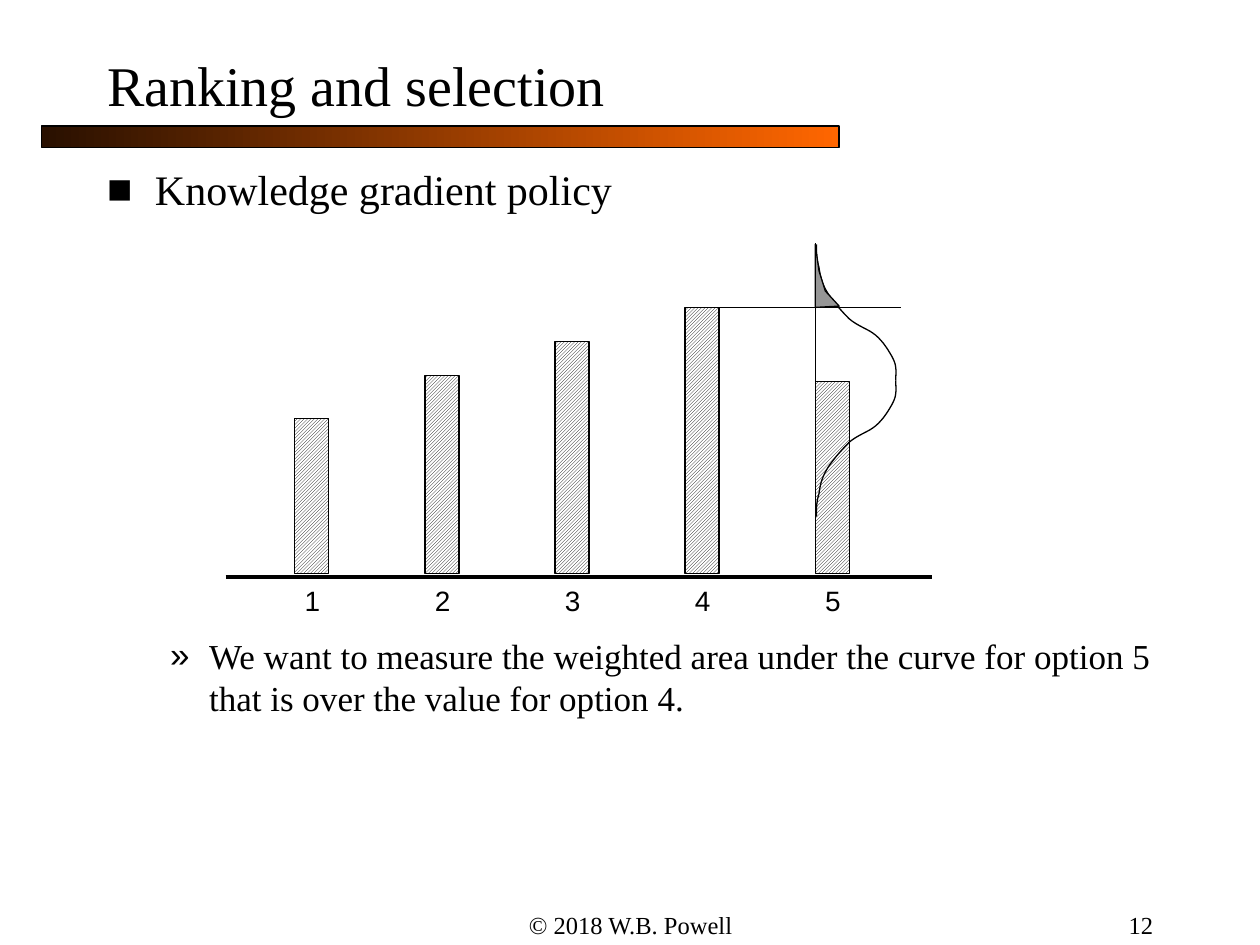
from pptx import Presentation
from pptx.dml.color import RGBColor
from pptx.enum.dml import MSO_PATTERN
from pptx.enum.shapes import MSO_CONNECTOR, MSO_SHAPE
from pptx.enum.text import MSO_ANCHOR, PP_ALIGN
from pptx.oxml.ns import qn
from pptx.util import Inches, Pt
from lxml.etree import SubElement

BLACK = RGBColor(0x00, 0x00, 0x00)
WHITE = RGBColor(0xFF, 0xFF, 0xFF)
GRAY = RGBColor(0x96, 0x96, 0x96)
BROWN = RGBColor(0x29, 0x10, 0x00)
ORANGE = RGBColor(0xFF, 0x66, 0x00)
SERIF, SANS = "Times New Roman", "Arial"

BAR_HEIGHTS = [1.23, 1.57, 1.84, 2.11, 1.52]
HALF_BELL = [
    (0.64, 0), (0.64, 0.06), (0.65, 0.11), (0.62, 0.17),
    (0.59, 0.23), (0.54, 0.31), (0.48, 0.36),
    (0.42, 0.41), (0.34, 0.43), (0.27, 0.49),
    (0.21, 0.55), (0.13, 0.64), (0.09, 0.71),
    (0.05, 0.78), (0.04, 0.83), (0.03, 0.9),
    (0.01, 0.96), (0.01, 1.02), (0.01, 1.08),
]
TAIL = [(0, 0.51), (0.19, 0.5), (0.08, 0.38), (0.03, 0.22), (0, 0.01)]


def place(sp, box):
    """Move a shape to a box of left, top, width and height in inches."""
    sp.left, sp.top, sp.width, sp.height = map(Inches, box)


def style_text(p, size, font=SERIF, align=PP_ALIGN.LEFT):
    """Set the font and alignment of a paragraph."""
    p.font.size, p.font.name, p.font.color.rgb = Pt(size), font, BLACK
    p.alignment = align


def outline(sp, width=0.75):
    """Give a shape a plain black outline and no shadow."""
    sp.line.color.rgb, sp.line.width = BLACK, Pt(width)
    sp.shadow.inherit = False


def add_text(slide, box, text, size, font=SERIF, align=PP_ALIGN.LEFT, wrap=True):
    """Add a text box holding one paragraph."""
    tf = slide.shapes.add_textbox(*map(Inches, box)).text_frame
    tf.word_wrap = wrap
    p = tf.paragraphs[0]
    p.text = text
    style_text(p, size, font, align)


def add_line(slide, x1, y1, x2, y2, width=0.75):
    """Add a straight black connector."""
    line = slide.shapes.add_connector(
        MSO_CONNECTOR.STRAIGHT, *map(Inches, (x1, y1, x2, y2)))
    line.line.color.rgb, line.line.width = BLACK, Pt(width)
    SubElement(line._element.spPr, qn("a:effectLst"))
    return line


def add_outline(slide, points, close=False):
    """Add a freeform through points given in inches."""
    pts = [(Inches(x), Inches(y)) for x, y in points]
    builder = slide.shapes.build_freeform(*pts[0])
    builder.add_line_segments(pts[1:], close=close)
    sp = builder.convert_to_shape()
    outline(sp)
    return sp


def sample_curve(knots, steps=8):
    """Return points along a chain of cubic Bezier curves."""
    points = [knots[0]]
    for i in range(0, len(knots) - 1, 3):
        for n in range(1, steps + 1):
            t = n / steps
            weights = ((1 - t) ** 3, 3 * t * (1 - t) ** 2, 3 * t * t * (1 - t), t ** 3)
            points.append(tuple(
                sum(w * k[axis] for w, k in zip(weights, knots[i:i + 4]))
                for axis in (0, 1)))
    return points


def add_title(slide, box):
    """Fill the title and draw the gradient rule beneath it."""
    left, top, _, height = box
    title = slide.shapes.title
    place(title, box)
    tf = title.text_frame
    tf.vertical_anchor = MSO_ANCHOR.MIDDLE
    tf.text = "Ranking and selection"
    style_text(tf.paragraphs[0], 32)
    rule = slide.shapes.add_shape(
        MSO_SHAPE.RECTANGLE, *map(Inches, (left - 0.42, top + height, 6.33, 0.17)))
    rule.fill.gradient()
    rule.fill.gradient_angle = 0
    for stop, color in zip(rule.fill.gradient_stops, (BROWN, ORANGE)):
        stop.color.rgb = color
    outline(rule)


def add_body(slide, box):
    """Fill the body with a bullet above and a sub-bullet below the chart."""
    body = slide.placeholders[1]
    place(body, box)
    tf = body.text_frame
    items = [
        ("Knowledge gradient policy", 0, 24, 0, 0.38, 0.38, "■"),
        ("We want to measure the weighted area under the curve for option 5 "
         "that is over the value for option 4.", 1, 20, 240, 0.81, 0.31, "»"),
    ]
    for i, (text, level, size, before, margin, hang, bullet) in enumerate(items):
        p = tf.add_paragraph() if i else tf.paragraphs[0]
        p.text, p.level, p.space_before = text, level, Pt(before)
        style_text(p, size)
        pPr = p._p.get_or_add_pPr()
        pPr.set("marL", str(Inches(margin)))
        pPr.set("indent", str(-Inches(hang)))
        bu = pPr.makeelement(qn("a:buChar"), {"char": bullet})
        pPr.find(qn("a:defRPr")).addprevious(bu)


def add_bars(slide, left, bottom):
    """Draw the hatched, numbered bars and return them."""
    bars = []
    for i, height in enumerate(BAR_HEIGHTS):
        x = left + i * 4.13 / 4
        bar = slide.shapes.add_shape(
            MSO_SHAPE.RECTANGLE, *map(Inches, (x, bottom - height, 0.27, height)))
        bar.fill.patterned()
        bar.fill.pattern = MSO_PATTERN.DARK_UPWARD_DIAGONAL
        bar.fill.fore_color.rgb, bar.fill.back_color.rgb = BLACK, WHITE
        outline(bar)
        add_text(slide, (x - 0.02, bottom + 0.03, 0.32, 0.37), str(i + 1), 16, SANS, wrap=False)
        bars.append(bar)
    return bars


def add_bell(slide, left, top):
    """Draw the sideways bell curve with its axis and shaded tail."""
    add_line(slide, left, top + 2.19, left, top)
    half = sample_curve(HALF_BELL)
    for sign in (1, -1):
        curve = add_outline(slide, [(left + x, top + 1.09 + sign * y) for x, y in half])
        curve.fill.background()
    tail = add_outline(slide, [(left + x, top + y) for x, y in TAIL], close=True)
    tail.fill.solid()
    tail.fill.fore_color.rgb = GRAY


def add_option_chart(slide, box):
    """Draw the bars, their baseline, the best value and the bell curve."""
    left, top, width, _ = box
    add_line(slide, left, top + 2.65, left + width, top + 2.65, 2.25)
    bars = add_bars(slide, left + 0.55, top + 2.62)
    best = add_line(slide, left + 3.78, top + 0.51, left + 5.36, top + 0.51)
    best.begin_connect(bars[3], 0)
    add_bell(slide, left + 4.68, top)


def add_footer(slide, box):
    """Add the copyright line and the slide number."""
    left, top, width, height = box
    add_text(slide, (left, top, 3.17, height), "© 2018 W.B. Powell", 14, align=PP_ALIGN.CENTER)
    add_text(slide, (left + width - 2.08, top, 2.08, height), "12", 14, align=PP_ALIGN.RIGHT)


def main():
    """Build and save the slide."""
    prs = Presentation()
    prs.slide_width, prs.slide_height = Inches(10), Inches(7.5)
    slide = prs.slides.add_slide(prs.slide_layouts[1])
    add_title(slide, (0.75, 0.33, 8.5, 0.67))
    add_body(slide, (0.75, 1.25, 8.5, 5.42))
    add_option_chart(slide, (1.79, 1.93, 5.61, 3.02))
    add_footer(slide, (3.42, 7.17, 5.83, 0.5))
    prs.save("out.pptx")


if __name__ == "__main__":
    main()
